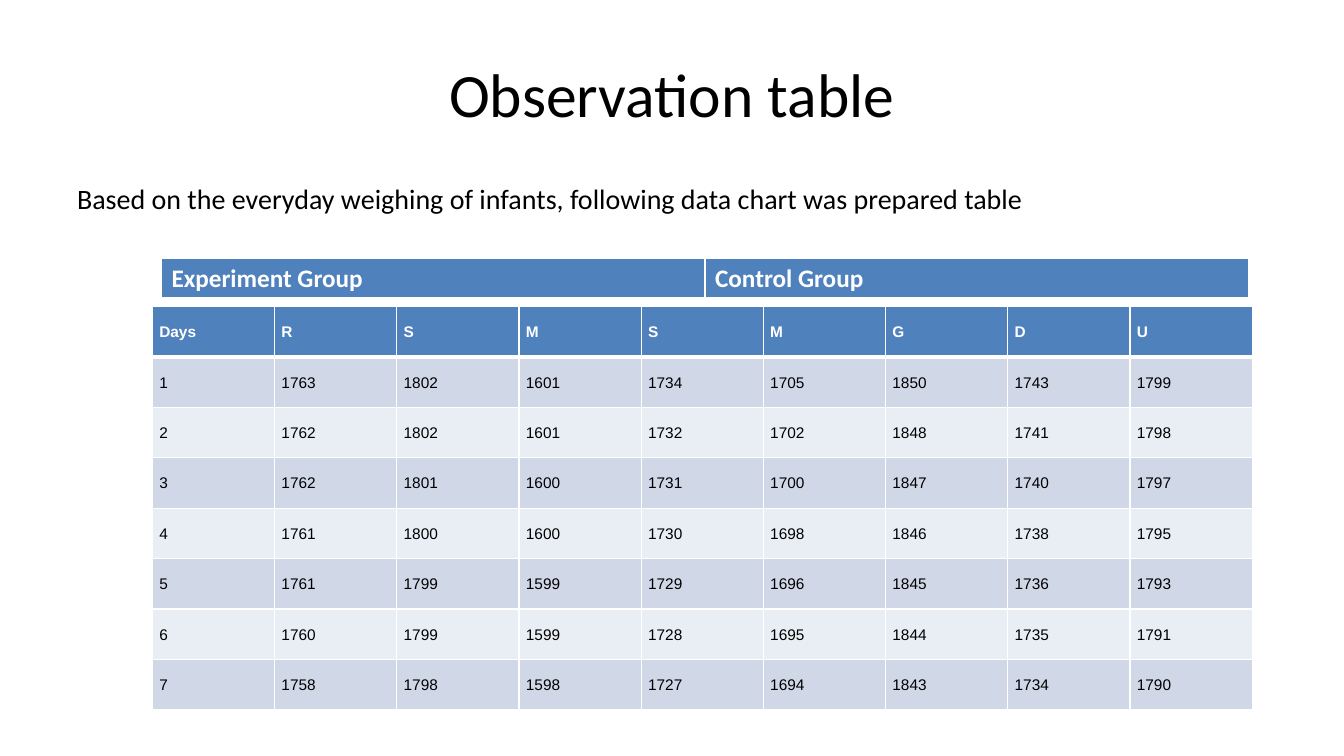
from dataclasses import dataclass
from typing import Optional

from lxml.etree import SubElement
from pptx import Presentation
from pptx.dml.color import RGBColor
from pptx.enum.text import MSO_ANCHOR as Anchor, PP_ALIGN as Align
from pptx.oxml.ns import qn
from pptx.util import Pt

BLACK, WHITE = "000000", "FFFFFF"
BLUE, DARK, LIGHT = "4F81BD", "D0D8E8", "E9EDF4"

DAYS = [
    ("Days", "R", "S", "M", "S", "M", "G", "D", "U"),
    (1, 1763, 1802, 1601, 1734, 1705, 1850, 1743, 1799),
    (2, 1762, 1802, 1601, 1732, 1702, 1848, 1741, 1798),
    (3, 1762, 1801, 1600, 1731, 1700, 1847, 1740, 1797),
    (4, 1761, 1800, 1600, 1730, 1698, 1846, 1738, 1795),
    (5, 1761, 1799, 1599, 1729, 1696, 1845, 1736, 1793),
    (6, 1760, 1799, 1599, 1728, 1695, 1844, 1735, 1791),
    (7, 1758, 1798, 1598, 1727, 1694, 1843, 1734, 1790),
]
GROUPS = [("Experiment Group", "Control Group")]


@dataclass
class Style:
    font: str
    size: float
    align: Optional[Align] = None
    lines: Optional[float] = None
    before: float = 0
    after: float = 0


@dataclass
class Label:
    text: str
    top: float
    height: float
    anchor: Anchor
    style: Style
    hang: float = 0


@dataclass
class Grid:
    rows: list
    left: float
    top: float
    col: float
    row: float
    style: Style
    side: float = 7.2
    edge: float = 3.6


LABELS = [
    Label("Observation table", 21.6, 90, Anchor.MIDDLE,
          Style("Calibri", 44, Align.CENTER)),
    Label("Based on the everyday weighing of infants, following data chart "
          "was prepared table", 126, 356.4, Anchor.TOP,
          Style("Calibri", 20, before=4), hang=27),
]
GRIDS = [
    Grid(DAYS, 108.9, 219, 87.28, 36,
         Style("Arial", 11, Align.JUSTIFY, 2.0, 6, 6), side=4.9, edge=0),
    Grid(GROUPS, 115.3, 184.4, 388.3, 29.2, Style("Calibri", 18)),
]


def color(code: str) -> RGBColor:
    return RGBColor.from_string(code)


def dress(par, style: Style, ink: str, bold: bool = False) -> None:
    """Format a paragraph and its runs."""
    par.alignment = style.align
    par.line_spacing = style.lines
    par.space_before, par.space_after = Pt(style.before), Pt(style.after)
    for run in par.runs:
        font = run.font
        font.name, font.size, font.bold = style.font, Pt(style.size), bold
        font.color.rgb = color(ink)


def add_label(slide, label: Label) -> None:
    box = slide.shapes.add_textbox(Pt(48), Pt(label.top), Pt(864), Pt(label.height))
    frame = box.text_frame
    frame.word_wrap = True
    frame.vertical_anchor = label.anchor
    frame.text = label.text
    par = frame.paragraphs[0]
    dress(par, label.style, BLACK)
    if label.hang:
        props = par._p.get_or_add_pPr()
        props.set("marL", str(Pt(label.hang)))
        props.set("indent", str(-Pt(label.hang)))


def add_edges(cell, top: float, bottom: float) -> None:
    """Draw white borders, with widths in points."""
    props = cell._tc.get_or_add_tcPr()
    for tag, width in (("lnL", 1), ("lnR", 1), ("lnT", top), ("lnB", bottom)):
        line = SubElement(props, qn(f"a:{tag}"), w=str(Pt(width)))
        fill = SubElement(line, qn("a:solidFill"))
        SubElement(fill, qn("a:srgbClr"), val=WHITE)


def add_grid(slide, grid: Grid) -> None:
    rows, cols = len(grid.rows), len(grid.rows[0])
    frame = slide.shapes.add_table(rows, cols, Pt(grid.left), Pt(grid.top),
                                   Pt(grid.col * cols), Pt(grid.row * rows))
    table = frame.table
    table.first_row = table.horz_banding = False
    for col in table.columns:
        col.width = Pt(grid.col)
    for i, vals in enumerate(grid.rows):
        table.rows[i].height = Pt(grid.row)
        head = i == 0
        back = BLUE if head else DARK if i % 2 else LIGHT
        for j, val in enumerate(vals):
            cell = table.cell(i, j)
            cell.margin_left = cell.margin_right = Pt(grid.side)
            cell.margin_top = cell.margin_bottom = Pt(grid.edge)
            add_edges(cell, 3 if i == 1 else 1, 3 if head else 1)
            cell.fill.solid()
            cell.fill.fore_color.rgb = color(back)
            cell.text_frame.text = str(val)
            dress(cell.text_frame.paragraphs[0], grid.style,
                  WHITE if head else BLACK, head)


def main() -> None:
    deck = Presentation()
    deck.slide_width, deck.slide_height = Pt(960), Pt(540)
    slide = deck.slides.add_slide(deck.slide_layouts[6])
    for label in LABELS:
        add_label(slide, label)
    for grid in GRIDS:
        add_grid(slide, grid)
    deck.save("out.pptx")


if __name__ == "__main__":
    main()
